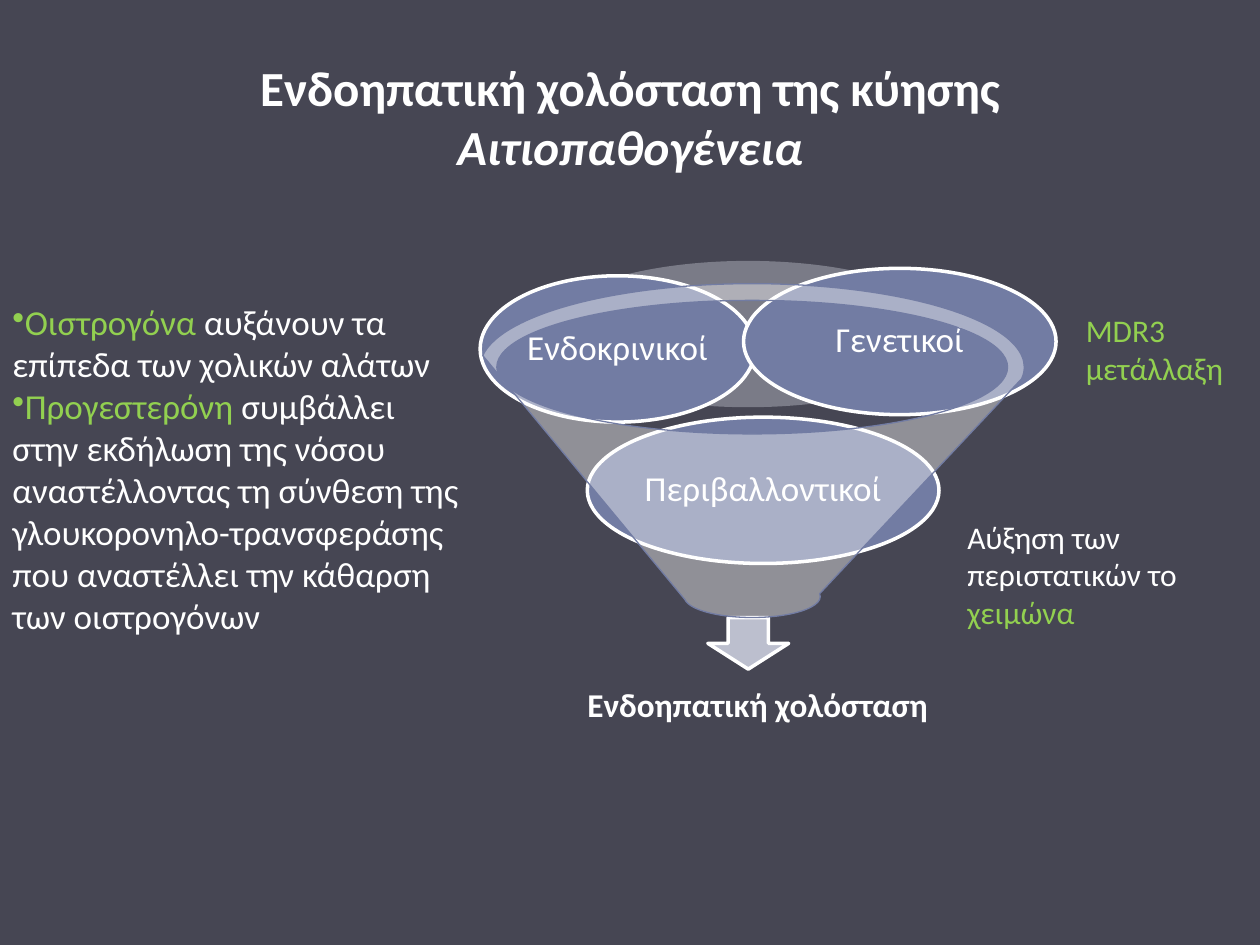
from pptx import Presentation
from pptx.dml.color import RGBColor
from pptx.enum.shapes import MSO_SHAPE
from pptx.enum.text import MSO_ANCHOR, PP_ALIGN
from pptx.oxml.ns import qn
from pptx.util import Cm, Pt
from lxml.etree import SubElement

THEME = {
    "font": "Calibri",
    "background": "464653", "text": "FFFFFF", "accent": "92D050",
    "factor": "727CA3", "arrow": "BCBFCE", "rim": "C9CCD7",
    "title_size": 28, "body_size": 20, "result_size": 19, "note_size": 18,
}

# Content: places are left, top, width, height in cm
TITLE = ("Ενδοηπατική χολόσταση της κύησης", "Αιτιοπαθογένεια")
TITLE_PLACE = (1.27, 0.76, 22.86, 3.18)
RESULT = "Ενδοηπατική χολόσταση"
RESULT_PLACE = (11.35, 13.26, 7.85, 1.96)
RIM_PLACE = (10.85, 5.26, 8.46, 2.95)
ARROW_PLACE = (14.27, 12.45, 1.63, 1.04)
FUNNEL_PLACE = (9.68, 5.72, 10.97, 6.73)
FACTOR_HEIGHT = 2.95
FACTORS = [  # label, left, top, width
    ("Περιβαλλοντικοί", 11.84, 8.41, 7.09),
    ("Ενδοκρινικοί", 9.68, 5.56, 5.54),
    ("Γενετικοί", 14.99, 5.41, 6.3),
]
NOTES = [  # place, size, bulleted, paragraphs of (text, colour)
    ((0, 5.94, 9.53, 7.09), "body_size", True, [
        [("Οιστρογόνα", "accent"),
         (" αυξάνουν τα επίπεδα των χολικών αλάτων", "text")],
        [("Προγεστερόνη", "accent"),
         (" συμβάλλει στην εκδήλωση της νόσου αναστέλλοντας τη σύνθεση της "
          "γλουκορονηλο-τρανσφεράσης που αναστέλλει την κάθαρση των "
          "οιστρογόνων", "text")],
    ]),
    ((21.64, 6.15, 3.76, 1.8), "note_size", False,
     [[("MDR3 μετάλλαξη", "accent")]]),
    ((19.25, 10.31, 4.95, 2.57), "note_size", False,
     [[("Αύξηση των περιστατικών το ", "text"), ("χειμώνα", "accent")]]),
]


def color(role):
    return RGBColor.from_string(THEME[role])


def place_in_cm(place):
    return [Cm(length) for length in place]


def set_font(font, size, role="text", bold=False):
    font.name = THEME["font"]
    font.size = Pt(THEME[size])
    font.bold = bold
    font.color.rgb = color(role)


def add_figure(slide, preset, place, fill, line=None, line_width=2, opacity=None):
    figure = slide.shapes.add_shape(preset, *place_in_cm(place))
    figure.shadow.inherit = False
    figure.fill.solid()
    figure.fill.fore_color.rgb = color(fill)
    if opacity:
        fill_color = figure.fill._xPr.find(qn("a:solidFill"))[0]
        SubElement(fill_color, qn("a:alpha"), val=str(opacity * 1000))
    if line:
        figure.line.color.rgb = color(line)
        figure.line.width = Pt(line_width)
    else:
        figure.line.fill.background()
    return figure


def write_label(frame, label, size, inset, bold=False):
    frame.word_wrap = True
    frame.vertical_anchor = MSO_ANCHOR.MIDDLE
    frame.margin_left = frame.margin_right = Cm(inset)
    frame.margin_top = frame.margin_bottom = Cm(inset)
    paragraph = frame.paragraphs[0]
    paragraph.text = label
    paragraph.alignment = PP_ALIGN.CENTER
    paragraph.line_spacing = 0.9
    set_font(paragraph.font, size, bold=bold)


def add_title(slide):
    title = slide.shapes.title
    title.left, title.top, title.width, title.height = place_in_cm(TITLE_PLACE)
    title.text_frame.vertical_anchor = MSO_ANCHOR.MIDDLE
    heading = title.text_frame.paragraphs[0]
    heading.alignment = PP_ALIGN.CENTER
    set_font(heading.font, "title_size", bold=True)
    topic, subtopic = TITLE
    heading.add_run().text = topic
    heading.add_line_break()
    subtopic_run = heading.add_run()
    subtopic_run.text = subtopic
    subtopic_run.font.italic = True


def add_funnel_diagram(slide):
    # Rim, arrow and result lie behind the factors
    add_figure(slide, MSO_SHAPE.OVAL, RIM_PLACE, "rim", opacity=40)
    add_figure(slide, MSO_SHAPE.DOWN_ARROW, ARROW_PLACE, "arrow", "text")
    result = slide.shapes.add_textbox(*place_in_cm(RESULT_PLACE))
    write_label(result.text_frame, RESULT, "result_size", 0.38, bold=True)

    # Factors that fall into the funnel
    for label, left, top, width in FACTORS:
        factor = add_figure(slide, MSO_SHAPE.OVAL,
                            (left, top, width, FACTOR_HEIGHT), "factor", "text")
        write_label(factor.text_frame, label, "body_size", 0.08)

    # Translucent funnel in front
    funnel = add_figure(slide, MSO_SHAPE.FUNNEL, FUNNEL_PLACE, "text", "factor",
                        line_width=0.75, opacity=40)
    funnel._element.spPr.find(qn("a:xfrm")).set("flipH", "1")


def add_note(slide, place, size, bulleted, paragraphs):
    frame = slide.shapes.add_textbox(*place_in_cm(place)).text_frame
    frame.word_wrap = True
    for index, parts in enumerate(paragraphs):
        paragraph = frame.add_paragraph() if index else frame.paragraphs[0]
        set_font(paragraph.font, size, parts[0][1])
        if bulleted:
            properties = paragraph._p.get_or_add_pPr()
            bullet = properties.makeelement(qn("a:buChar"), {"char": "•"})
            properties.insert(0, bullet)
        for text, role in parts:
            run = paragraph.add_run()
            run.text = text
            run.font.color.rgb = color(role)


def main():
    deck = Presentation()
    deck.slide_width, deck.slide_height = Cm(25.4), Cm(19.05)
    slide = deck.slides.add_slide(deck.slide_layouts[5])
    slide.background.fill.solid()
    slide.background.fill.fore_color.rgb = color("background")
    add_title(slide)
    add_funnel_diagram(slide)
    for note in NOTES:
        add_note(slide, *note)
    deck.save("out.pptx")


if __name__ == "__main__":
    main()
